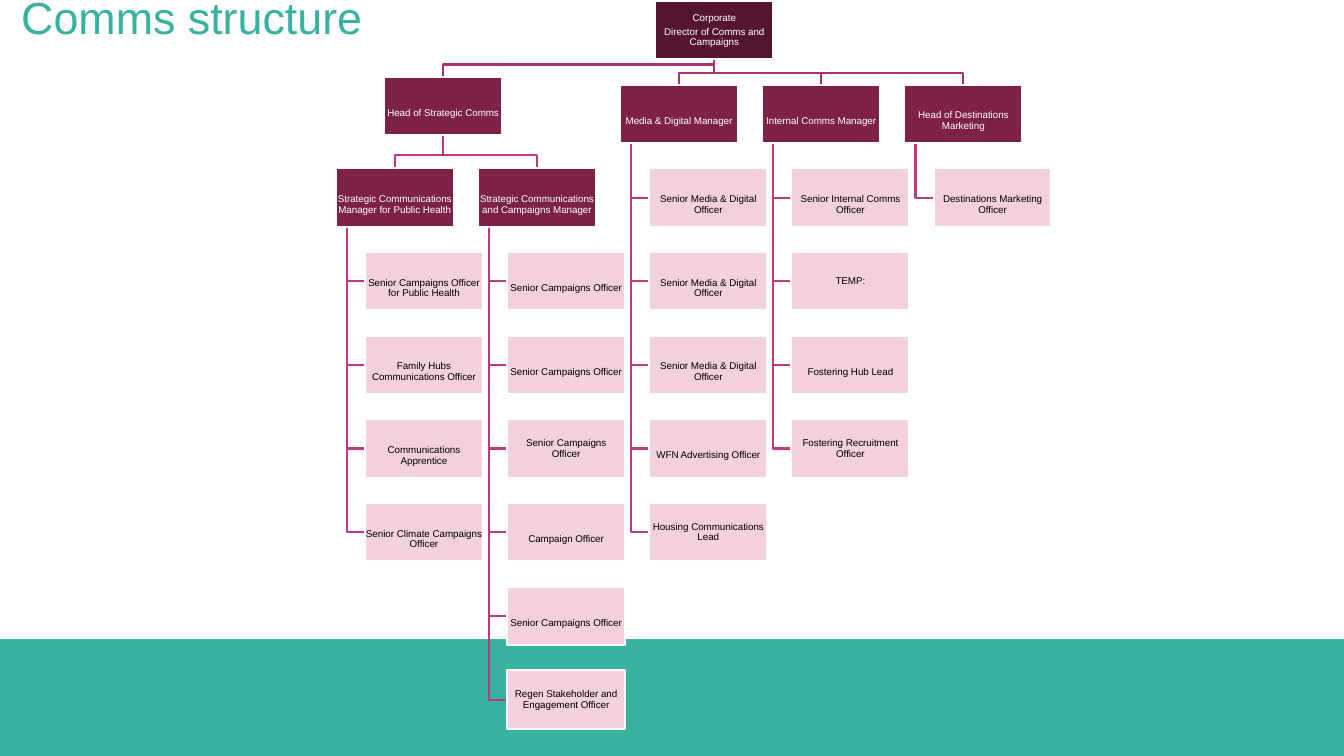
from dataclasses import dataclass

from pptx import Presentation
from pptx.dml.color import RGBColor
from pptx.enum.shapes import MSO_SHAPE
from pptx.enum.text import MSO_ANCHOR, MSO_AUTO_SIZE, PP_ALIGN
from pptx.util import Inches, Pt

TEAL = RGBColor(0x38, 0xB3, 0xA0)
TITLE_TEAL = RGBColor(0x37, 0xB2, 0xA0)
WHITE = RGBColor(0xFF, 0xFF, 0xFF)
BLACK = RGBColor(0, 0, 0)
DIRECTOR_FILL = RGBColor(0x54, 0x16, 0x2F)
MANAGER_FILL = RGBColor(0x7D, 0x21, 0x47)
OFFICER_FILL = RGBColor(0xF3, 0xD0, 0xDE)
DIRECTOR_LINK = RGBColor(0xAE, 0x2F, 0x72)
TEAM_LINK = RGBColor(0xC5, 0x36, 0x81)

FONT = "Arial"
BOX_W, BOX_H = 1.17, 0.58
COLUMN_PITCH, ROW_PITCH = 1.41, 0.83
FIRST_COLUMN, FIRST_ROW = 3.33, 0.84
OFFICER_INDENT, TRUNK_INDENT = 0.29, 0.11
DIRECTOR_AT = (6.5, 0.01)
STRATEGIC_HEAD_AT = (3.81, 0.76)


@dataclass
class Post:
    title: str
    drop: float = 0.14
    side: float = 0


@dataclass
class Team:
    manager: Post
    row: int
    officers: list


TEAMS = [
    Team(Post("Strategic Communications Manager for Public Health"), 1, [
        Post("Senior Campaigns Officer for Public Health"),
        Post("Family Hubs Communications Officer"),
        Post("Communications Apprentice"),
        Post("Senior Climate Campaigns Officer"),
    ]),
    Team(Post("Strategic Communications and Campaigns Manager"), 1, [
        Post("Senior Campaigns Officer"),
        Post("Senior Campaigns Officer"),
        Post("Senior Campaigns Officer", drop=0, side=0.1),
        Post("Campaign Officer"),
        Post("Senior Campaigns Officer"),
        Post("Regen Stakeholder and Engagement Officer", drop=0),
    ]),
    Team(Post("Media & Digital Manager"), 0, [
        Post("Senior Media & Digital Officer"),
        Post("Senior Media & Digital Officer"),
        Post("Senior Media & Digital Officer"),
        Post("WFN Advertising Officer"),
        Post("Housing Communications Lead", drop=0),
    ]),
    Team(Post("Internal Comms Manager"), 0, [
        Post("Senior Internal Comms Officer"),
        Post("TEMP:", drop=0),
        Post("Fostering Hub Lead"),
        Post("Fostering Recruitment Officer", drop=0),
    ]),
    Team(Post("Head of Destinations Marketing"), 0, [
        Post("Destinations Marketing Officer"),
    ]),
]


def draw_link(slide, points, color):
    corners = [(Inches(x), Inches(y)) for x, y in points]
    outline = slide.shapes.build_freeform(*corners[0])
    outline.add_line_segments(corners[1:], close=False)
    link = outline.convert_to_shape()
    link.shadow.inherit = False
    link.fill.background()
    link.line.color.rgb = color
    link.line.width = Pt(1.5)


def link_down(slide, parent, child, bend, color):
    start, end = parent[0] + BOX_W / 2, child[0] + BOX_W / 2
    draw_link(slide, [(start, parent[1] + BOX_H), (start, bend),
                      (end, bend), (end, child[1])], color)


def draw_post(slide, at, post, fill, ink):
    box = slide.shapes.add_shape(MSO_SHAPE.RECTANGLE, Inches(at[0]), Inches(at[1]),
                                 Inches(BOX_W), Inches(BOX_H))
    box.shadow.inherit = False
    box.fill.solid()
    box.fill.fore_color.rgb = fill
    box.line.color.rgb = WHITE
    box.line.width = Pt(1.5)
    frame = box.text_frame
    frame.word_wrap = True
    frame.vertical_anchor = MSO_ANCHOR.MIDDLE
    frame.margin_left = frame.margin_right = Inches(post.side)
    frame.margin_top, frame.margin_bottom = Inches(post.drop), 0
    frame.text = post.title
    for paragraph in frame.paragraphs:
        paragraph.alignment = PP_ALIGN.CENTER
        paragraph.line_spacing = 0.9
        paragraph.space_after = Pt(2.5)
        for run in paragraph.runs:
            run.font.name = FONT
            run.font.size = Pt(7)
            run.font.color.rgb = ink


def draw_team(slide, at, team):
    left, top = at
    trunk, branch = left + TRUNK_INDENT, left + OFFICER_INDENT
    places = [(branch, top + ROW_PITCH * (i + 1)) for i in range(len(team.officers))]
    for place in places:
        middle = place[1] + BOX_H / 2
        draw_link(slide, [(trunk, top + BOX_H), (trunk, middle), (branch, middle)], TEAM_LINK)
    draw_post(slide, at, team.manager, MANAGER_FILL, WHITE)
    for place, officer in zip(places, team.officers):
        draw_post(slide, place, officer, OFFICER_FILL, BLACK)


def draw_structure(slide):
    link_down(slide, DIRECTOR_AT, STRATEGIC_HEAD_AT, 0.64, DIRECTOR_LINK)
    places = [(FIRST_COLUMN + COLUMN_PITCH * column, FIRST_ROW + ROW_PITCH * team.row)
              for column, team in enumerate(TEAMS)]
    for place, team in zip(places, TEAMS):
        if team.row:
            link_down(slide, STRATEGIC_HEAD_AT, place, 1.54, TEAM_LINK)
        else:
            link_down(slide, DIRECTOR_AT, place, 0.72, DIRECTOR_LINK)
    director = Post("Corporate\nDirector of Comms and Campaigns", drop=0)
    draw_post(slide, DIRECTOR_AT, director, DIRECTOR_FILL, WHITE)
    draw_post(slide, STRATEGIC_HEAD_AT, Post("Head of Strategic Comms"), MANAGER_FILL, WHITE)
    for place, team in zip(places, TEAMS):
        draw_team(slide, place, team)


def draw_band(slide, left, top, width, height):
    band = slide.shapes.add_shape(MSO_SHAPE.RECTANGLE, Inches(left), Inches(top),
                                  Inches(width), Inches(height))
    band.shadow.inherit = False
    band.fill.solid()
    band.fill.fore_color.rgb = TEAL
    band.line.fill.background()


def set_title(slide, left, top, width, height):
    title = slide.shapes.title
    title.left, title.top = Inches(left), Inches(top)
    title.width, title.height = Inches(width), Inches(height)
    frame = title.text_frame
    frame.text = "Comms structure"
    frame.auto_size = MSO_AUTO_SIZE.NONE
    frame.vertical_anchor = MSO_ANCHOR.BOTTOM
    heading = frame.paragraphs[0]
    heading.alignment = PP_ALIGN.LEFT
    heading.line_spacing = 0.9
    font = heading.runs[0].font
    font.name = FONT
    font.size = Pt(32)
    font.color.rgb = TITLE_TEAL


def main():
    deck = Presentation()
    deck.slide_width, deck.slide_height = Inches(13.33), Inches(7.5)
    slide = deck.slides.add_slide(deck.slide_layouts[5])
    draw_band(slide, 0, 6.34, 13.33, 1.16)
    set_title(slide, 0.11, -0.14, 12.5, 0.63)
    draw_structure(slide)
    deck.save("out.pptx")


if __name__ == "__main__":
    main()
